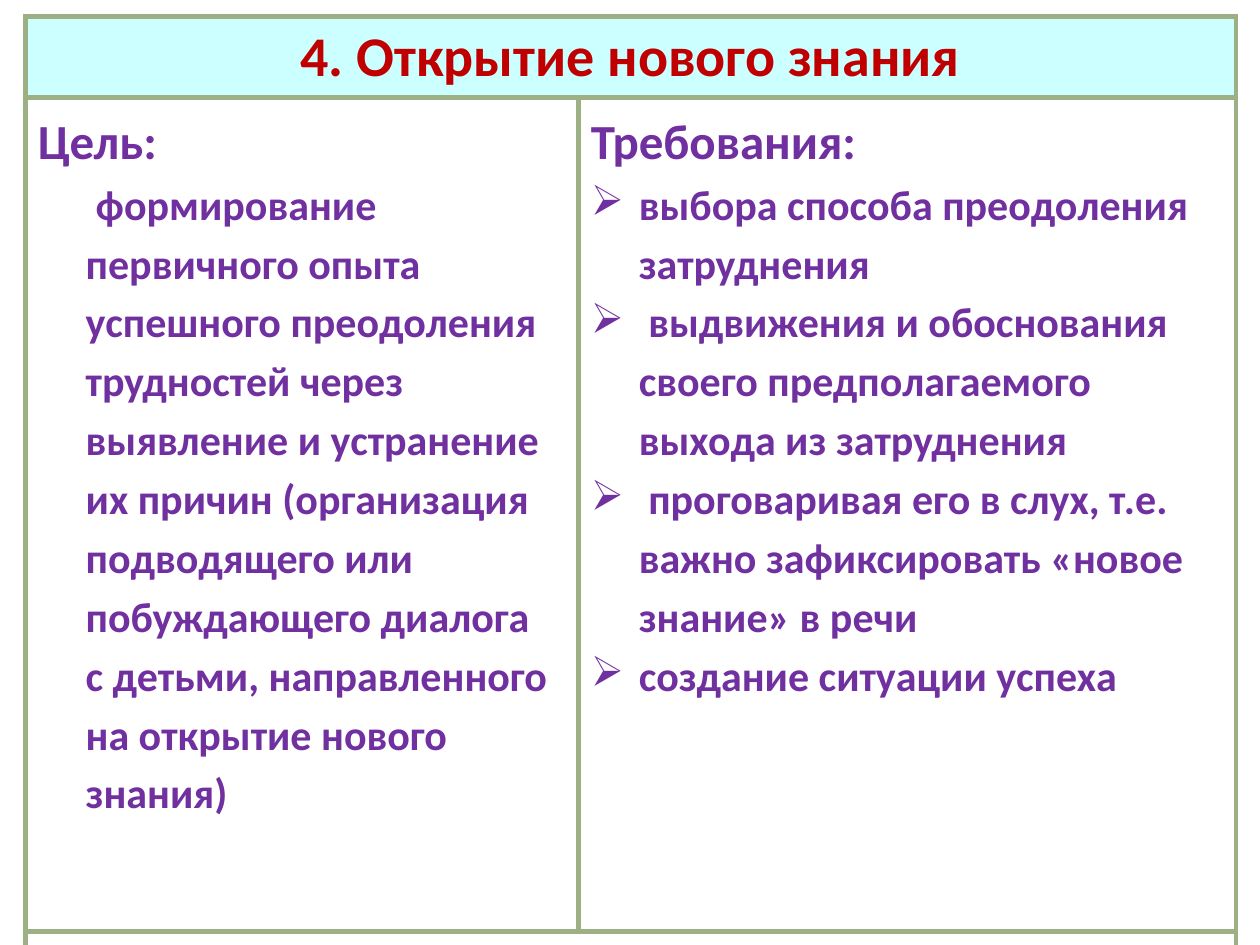
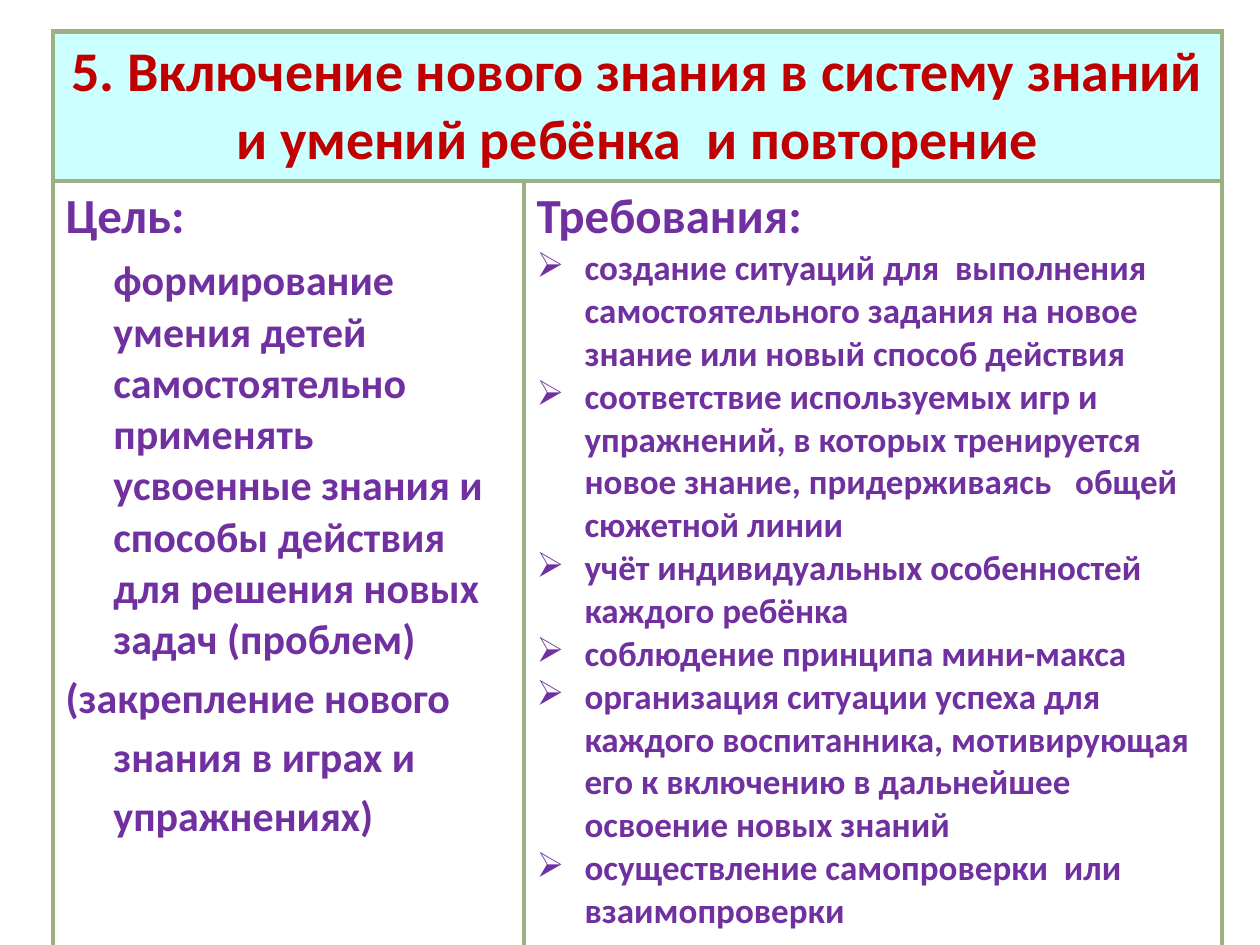
from lxml import etree
from pptx import Presentation
from pptx.dml.color import RGBColor
from pptx.enum.text import MSO_ANCHOR, PP_ALIGN
from pptx.oxml.ns import qn
from pptx.util import Inches, Pt

COLORS = {"title": "C00000", "text": "7030A0", "band": "CCFFFF", "border": "9CB084"}
FONT_NAME = "Calibri"
HANGING = 0.38
BORDER_POINTS = 3

# Formats shared by the title, headings and body text
TITLE = {"size": Pt(32), "color": "title"}
HEADING = {"size": Pt(28), "color": "text"}
BODY = {"size": Pt(24), "color": "text"}
SMALL = {"size": Pt(20), "color": "text"}

STAGES = [
    {
        "title": "4. Открытие нового знания",
        "position": (0.2, 0.13),
        "columns": (4.39, 5.22),
        "rows": (0.63, 6.62, 1.25),
        "goal": [
            ("Цель:", HEADING, {"line_spacing": 1.15}),
            ("формирование первичного опыта успешного преодоления трудностей "
             "через выявление и устранение их причин (организация подводящего "
             "или побуждающего диалога  с детьми, направленного на открытие "
             "нового знания)", BODY, {"line_spacing": 1.15, "indent": 0.08}),
        ],
        "requirements": [
            "выбора способа преодоления затруднения",
            " выдвижения и обоснования своего предполагаемого выхода из затруднения",
            " проговаривая его в слух, т.е.  важно зафиксировать «новое знание» в речи",
            "создание ситуации успеха",
        ],
        "list_font": BODY,
        "list_spacing": {"line_spacing": 1.15},
    },
    {
        "title": "5. Включение нового знания в систему знаний и умений ребёнка  и повторение",
        "position": (0.42, 0.25),
        "columns": (3.74, 5.54),
        "rows": (1.17, 6.99),
        "goal": [
            ("Цель:", HEADING, {}),
            ("формирование умения детей самостоятельно применять  усвоенные "
             "знания и способы действия для решения новых задач (проблем)",
             BODY, {"space_before": Pt(5), "indent": 0}),
            ("(закрепление нового знания в играх и упражнениях)",
             BODY, {"line_spacing": 1.15}),
        ],
        "requirements": [
            "создание ситуаций для  выполнения самостоятельного задания на новое "
            "знание или новый способ действия",
            "соответствие используемых игр и упражнений, в которых тренируется  "
            "новое знание, придерживаясь   общей сюжетной линии",
            "учёт индивидуальных особенностей каждого ребёнка",
            "соблюдение принципа мини-макса",
            "организация ситуации успеха для каждого воспитанника, мотивирующая "
            "его к включению в дальнейшее освоение новых знаний",
            "осуществление самопроверки  или взаимопроверки",
        ],
        "list_font": SMALL,
        "list_spacing": {},
    },
]


def set_borders(cell):
    properties = cell._tc.get_or_add_tcPr()
    for side in ("a:lnL", "a:lnR", "a:lnT", "a:lnB"):
        line = etree.SubElement(properties, qn(side), w=str(Pt(BORDER_POINTS)))
        fill = etree.SubElement(line, qn("a:solidFill"))
        etree.SubElement(fill, qn("a:srgbClr"), val=COLORS["border"])


def set_indent(paragraph, indent, bullet):
    properties = paragraph._p.get_or_add_pPr()
    properties.set("marL", str(Inches(HANGING)))
    properties.set("indent", str(Inches(indent)))
    if bullet:
        etree.SubElement(properties, qn("a:buChar"), char="➢")


def format_paragraph(paragraph, text, font_format, spacing):
    for name, value in spacing.items():
        setattr(paragraph, name, value)
    run = paragraph.add_run()
    run.text = text
    font = run.font
    for name, value in {"name": FONT_NAME, "bold": True, "size": font_format["size"]}.items():
        setattr(font, name, value)
    font.color.rgb = RGBColor.from_string(COLORS[font_format["color"]])


def fill_text(cell, items):
    """Write (text, font, layout) items as hanging paragraphs."""
    frame = cell.text_frame
    for number, (text, font_format, layout) in enumerate(items):
        paragraph = frame.add_paragraph() if number else frame.paragraphs[0]
        spacing = dict(layout)
        indent = spacing.pop("indent", -HANGING)
        bullet = spacing.pop("bullet", False)
        set_indent(paragraph, indent, bullet)
        format_paragraph(paragraph, text, font_format, spacing)


def fill_title(cell, text):
    cell.fill.solid()
    cell.fill.fore_color.rgb = RGBColor.from_string(COLORS["band"])
    cell.vertical_anchor = MSO_ANCHOR.MIDDLE
    format_paragraph(cell.text_frame.paragraphs[0], text, TITLE,
                     {"alignment": PP_ALIGN.CENTER})


def add_stage_table(slide, stage):
    columns, rows = stage["columns"], stage["rows"]
    left, top = stage["position"]
    table = slide.shapes.add_table(
        len(rows), len(columns), Inches(left), Inches(top),
        Inches(sum(columns)), Inches(sum(rows))).table
    table.first_row = table.horz_banding = False
    for column, width in zip(table.columns, columns):
        column.width = Inches(width)
    for row, height in zip(table.rows, rows):
        row.height = Inches(height)
    for cell in table.iter_cells():
        set_borders(cell)
        cell.fill.background()

    # Every row but the one with the two texts spans both columns
    for index in range(len(rows)):
        if index != 1:
            table.cell(index, 0).merge(table.cell(index, 1))
    return table


def add_stage_slide(presentation, stage):
    slide = presentation.slides.add_slide(presentation.slide_layouts[6])
    table = add_stage_table(slide, stage)
    fill_title(table.cell(0, 0), stage["title"])
    fill_text(table.cell(1, 0), stage["goal"])
    spacing = stage["list_spacing"]
    requirements = [("Требования:", HEADING, spacing)]
    requirements += [(text, stage["list_font"], {**spacing, "bullet": True})
                     for text in stage["requirements"]]
    fill_text(table.cell(1, 1), requirements)


def main():
    presentation = Presentation()
    presentation.slide_width = Inches(10)
    presentation.slide_height = Inches(7.5)
    for stage in STAGES:
        add_stage_slide(presentation, stage)
    presentation.save("out.pptx")


if __name__ == "__main__":
    main()
